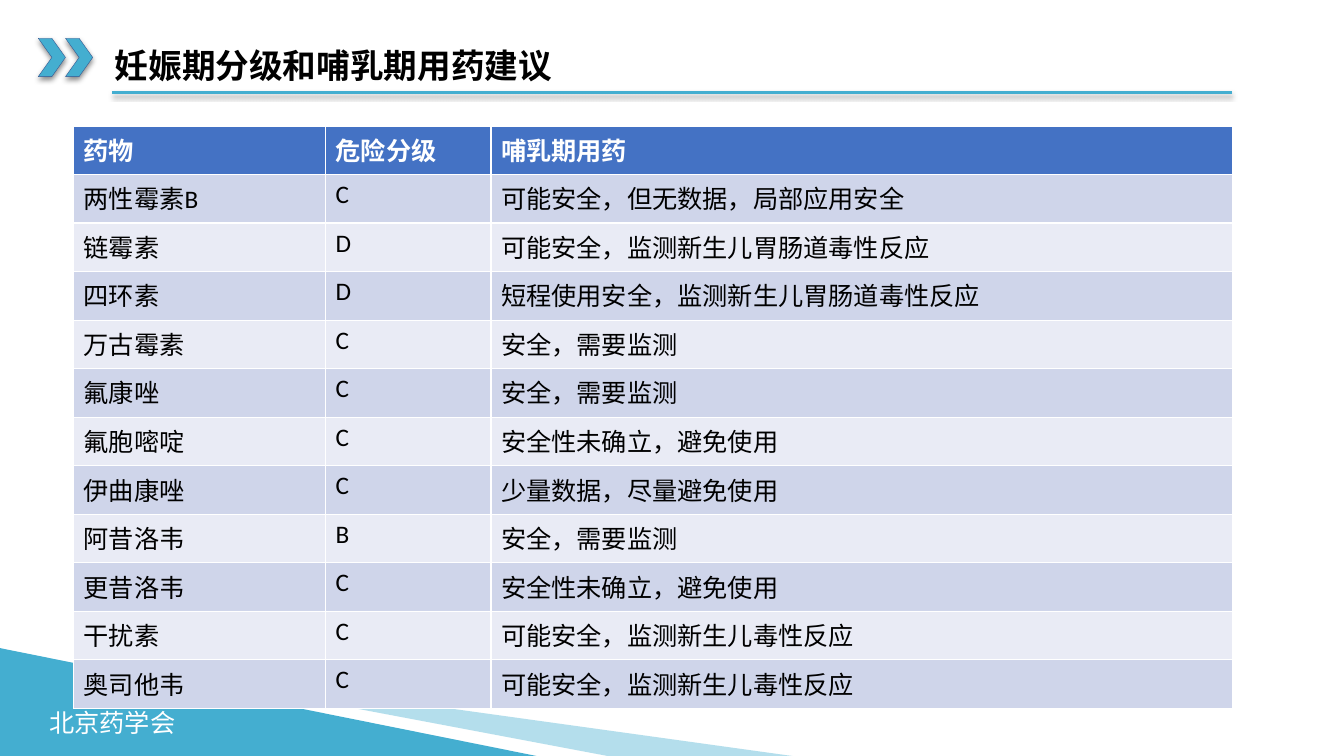
from lxml import etree
from pptx import Presentation
from pptx.dml.color import RGBColor
from pptx.enum.shapes import MSO_CONNECTOR as Connector, MSO_SHAPE as Shape
from pptx.enum.text import MSO_ANCHOR as Anchor, MSO_AUTO_SIZE as AutoSize, PP_ALIGN as Align
from pptx.oxml.ns import qn
from pptx.util import Inches, Pt

TITLE = "妊娠期分级和哺乳期用药建议"
SOCIETY = "北京药学会"
HEADER = ("药物", "危险分级", "哺乳期用药")
DRUGS = [
    ("两性霉素B", "C", "可能安全，但无数据，局部应用安全"),
    ("链霉素", "D", "可能安全，监测新生儿胃肠道毒性反应"),
    ("四环素", "D", "短程使用安全，监测新生儿胃肠道毒性反应"),
    ("万古霉素", "C", "安全，需要监测"),
    ("氟康唑", "C", "安全，需要监测"),
    ("氟胞嘧啶", "C", "安全性未确立，避免使用"),
    ("伊曲康唑", "C", "少量数据，尽量避免使用"),
    ("阿昔洛韦", "B", "安全，需要监测"),
    ("更昔洛韦", "C", "安全性未确立，避免使用"),
    ("干扰素", "C", "可能安全，监测新生儿毒性反应"),
    ("奥司他韦", "C", "可能安全，监测新生儿毒性反应"),
]
COLUMN_WIDTHS = (2.5, 1.64, 7.36)
TABLE_HEIGHT = 5.78
SWOOSH = [(0.73, 6.51), (7.93, 7.51), (6.08, 7.51), (0.73, 6.5)]

COLORS = {
    "accent": "44AED0", "outline": "325491", "header": "4472C4",
    "band_dark": "CFD5EA", "band_light": "E9EBF5",
    "white": "FFFFFF", "black": "000000", "gray": "808080",
}
TITLE_FONT = {"name": "Calibri", "size": Pt(24), "bold": True}
HEADER_FONT = {"name": "Calibri", "size": Pt(18), "bold": True}
BODY_FONT = {"name": "Calibri", "size": Pt(18), "bold": False}


def rgb(name):
    return RGBColor.from_string(COLORS[name])


def write(frame, text, font_format, color, **paragraph_format):
    paragraph = frame.paragraphs[0]
    paragraph.text = text
    for key, value in paragraph_format.items():
        setattr(paragraph, key, value)
    font = paragraph.runs[0].font
    for key, value in font_format.items():
        setattr(font, key, value)
    font.color.rgb = rgb(color)


def paint(fill, color):
    fill.solid()
    fill.fore_color.rgb = rgb(color)


def set_alpha(color_element, percent):
    etree.SubElement(color_element, qn("a:alpha"), val=str(percent * 1000))


def add_shadow(shape, color, alpha, blur, distance):
    properties = shape._element.spPr
    effects = properties.find(qn("a:effectLst"))
    if effects is None:
        effects = etree.SubElement(properties, qn("a:effectLst"))
    outer = etree.SubElement(effects, qn("a:outerShdw"), blurRad=str(Pt(blur)),
                             dist=str(Pt(distance)), dir="5400000", rotWithShape="0")
    set_alpha(etree.SubElement(outer, qn("a:srgbClr"), val=COLORS[color]), alpha)


def add_accent(shape):
    shape.shadow.inherit = False
    paint(shape.fill, "accent")
    shape.line.fill.background()
    return shape


def add_background(shapes):
    rule = shapes.add_connector(Connector.STRAIGHT, Inches(12.22), Inches(0.92),
                                Inches(1.11), Inches(0.92))
    rule.line.color.rgb = rgb("accent")
    rule.line.width = Pt(2.25)
    add_shadow(rule, "gray", 100, 3, 2)

    corner = add_accent(shapes.add_shape(Shape.ISOSCELES_TRIANGLE, 0, Inches(6.43),
                                         Inches(5.32), Inches(1.07)))
    corner.adjustments[0] = 0

    society = shapes.add_textbox(Inches(0.39), Inches(6.97), Inches(1.46), Inches(0.4))
    society.text_frame.word_wrap = False
    write(society.text_frame, SOCIETY, BODY_FONT, "white")

    points = [(Inches(x), Inches(y)) for x, y in SWOOSH]
    builder = shapes.build_freeform(*points[0], scale=1.0)
    builder.add_line_segments(points[1:], close=True)
    swoosh = add_accent(builder.convert_to_shape())
    set_alpha(swoosh._element.spPr.find(qn("a:solidFill"))[0], 40)

    for left in (0.65, 0.38):
        chevron = add_accent(shapes.add_shape(Shape.CHEVRON, Inches(left), Inches(0.38),
                                              Inches(0.27), Inches(0.38)))
        chevron.line.color.rgb = rgb("outline")
        chevron.line.width = Pt(0.25)
        add_shadow(chevron, "black", 46, 4, 2)


def place_title(title):
    place = {"left": 1.04, "top": 0.4, "width": 11.38, "height": 0.54}
    for key, value in place.items():
        setattr(title, key, Inches(value))
    frame = title.text_frame
    frame.auto_size = AutoSize.NONE
    frame.word_wrap = True
    frame.vertical_anchor = Anchor.MIDDLE
    write(frame, TITLE, TITLE_FONT, "black", alignment=Align.LEFT, line_spacing=0.9)


def add_drug_table(shapes):
    rows = [HEADER, *DRUGS]
    table = shapes.add_table(len(rows), len(HEADER), Inches(0.73), Inches(1.25),
                             Inches(sum(COLUMN_WIDTHS)), Inches(TABLE_HEIGHT)).table
    for column, width in zip(table.columns, COLUMN_WIDTHS):
        column.width = Inches(width)
    for r, row in enumerate(rows):
        table.rows[r].height = Inches(TABLE_HEIGHT / len(rows))
        band = "band_dark" if r % 2 else "band_light"
        fill, font, color = (band, BODY_FONT, "black") if r else ("header", HEADER_FONT, "white")
        for c, text in enumerate(row):
            cell = table.cell(r, c)
            paint(cell.fill, fill)
            write(cell.text_frame, text, font, color)


def main():
    deck = Presentation()
    deck.slide_width, deck.slide_height = Inches(13.33), Inches(7.5)
    slide = deck.slides.add_slide(deck.slide_layouts[5])
    add_background(slide.shapes)
    place_title(slide.shapes.title)
    add_drug_table(slide.shapes)
    deck.save("out.pptx")


if __name__ == "__main__":
    main()
